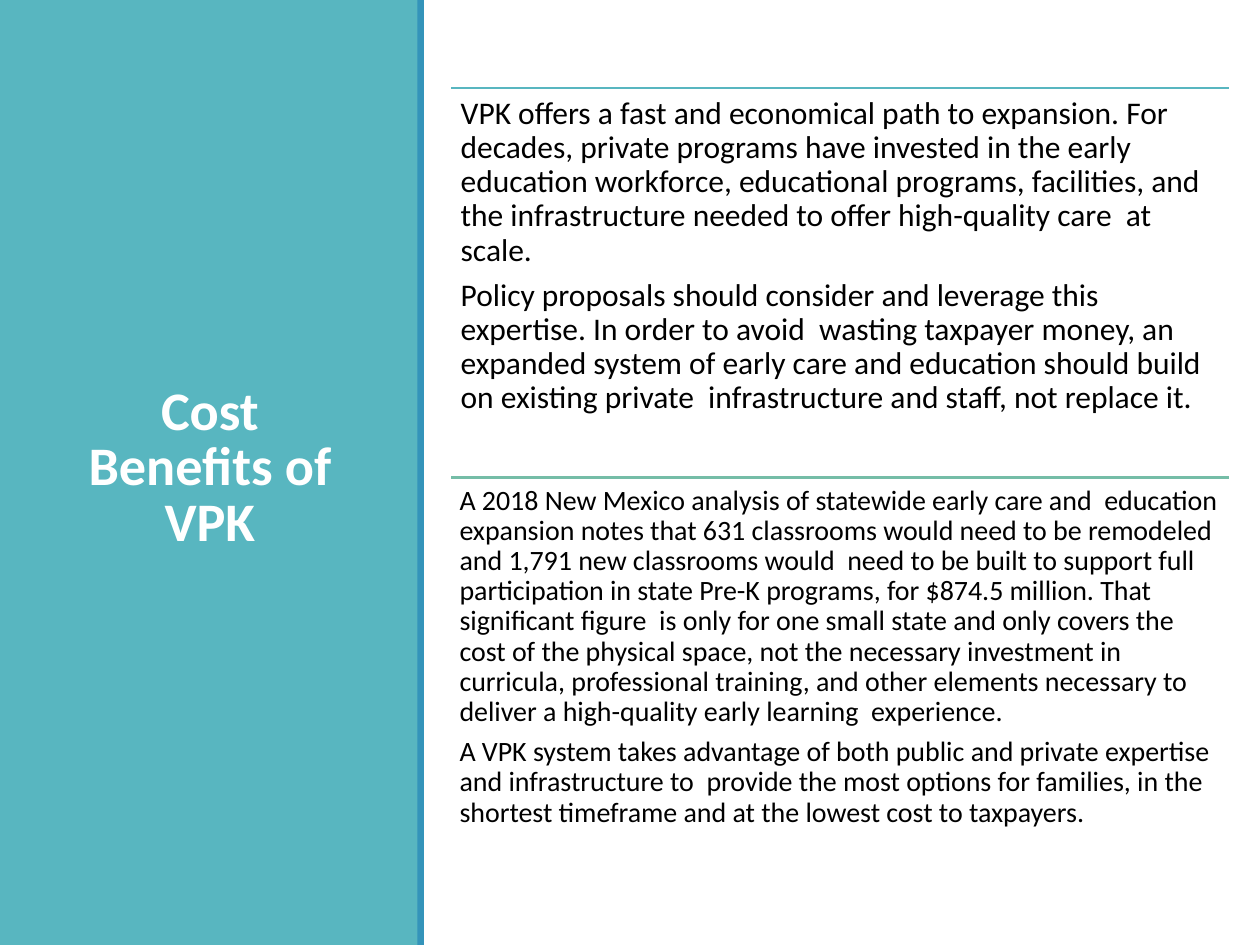
from lxml.etree import SubElement
from pptx import Presentation
from pptx.dml.color import RGBColor
from pptx.enum.shapes import MSO_CONNECTOR as Conn, MSO_SHAPE as Shape
from pptx.enum.text import MSO_ANCHOR as Anchor, MSO_AUTO_SIZE as Auto, PP_ALIGN as Align
from pptx.oxml.ns import qn
from pptx.util import Pt

TEAL = RGBColor(0x58, 0xB6, 0xC0)
BLUE = RGBColor(0x34, 0x94, 0xBA)
GREEN = RGBColor(0x75, 0xBD, 0xA7)
WHITE = RGBColor(0xFF, 0xFF, 0xFF)
BLACK = RGBColor(0, 0, 0)

# Text column, in points
LEFT, TOP, WIDTH, STEP = 257.8, 50.4, 444.2, 222.5

# Rule colour, text size and paragraphs of each block
BLOCKS = [
    (TEAL, 18, [
        "VPK offers a fast and economical path to expansion. For decades, "
        "private programs have invested in the early  education workforce, "
        "educational programs, facilities, and the infrastructure needed to "
        "offer high-quality care  at scale.",
        "Policy proposals should consider and leverage this expertise. In "
        "order to avoid  wasting taxpayer money, an expanded system of early "
        "care and education should build on existing private  infrastructure "
        "and staff, not replace it.",
    ]),
    (GREEN, 16, [
        "A 2018 New Mexico analysis of statewide early care and  education "
        "expansion notes that 631 classrooms would need to be remodeled and "
        "1,791 new classrooms would  need to be built to support full "
        "participation in state Pre-K programs, for $874.5 million. That "
        "significant figure  is only for one small state and only covers the "
        "cost of the physical space, not the necessary investment in  "
        "curricula, professional training, and other elements necessary to "
        "deliver a high-quality early learning  experience.",
        "A VPK system takes advantage of both public and private expertise "
        "and infrastructure to  provide the most options for families, in the "
        "shortest timeframe and at the lowest cost to taxpayers.",
    ]),
]


def place(item, x, y, w, h):
    item.left, item.top, item.width, item.height = Pt(x), Pt(y), Pt(w), Pt(h)


def write(frame, texts, *, size, color, bold=False, align=Align.LEFT,
          anchor=Anchor.TOP, lead=0.9, after=0, inset=None):
    """Fill a text frame with unbulleted paragraphs in one format."""
    frame.word_wrap = True
    frame.auto_size = Auto.NONE
    frame.vertical_anchor = anchor
    if inset is not None:
        frame.margin_left = frame.margin_right = Pt(inset)
        frame.margin_top = frame.margin_bottom = Pt(inset)
    for i, text in enumerate(texts):
        para = frame.add_paragraph() if i else frame.paragraphs[0]
        para.alignment = align
        para.line_spacing = lead
        para.space_before, para.space_after = Pt(0), Pt(after)
        props = para._p.get_or_add_pPr()
        props.set("marL", "0")
        props.set("indent", "0")
        SubElement(props, qn("a:buNone"))
        run = para.add_run()
        run.text = text
        font = run.font
        font.name, font.size, font.bold = "Calibri", Pt(size), bold
        font.color.rgb = color


def panel(slide, x, w, color, depth):
    """Add a full-height band at the given depth behind the text."""
    band = slide.shapes.add_shape(Shape.RECTANGLE, Pt(x), 0, Pt(w), Pt(540))
    band.shadow.inherit = False
    band.fill.solid()
    band.fill.fore_color.rgb = color
    band.line.fill.background()
    slide.shapes._spTree.insert(2 + depth, band._element)


def rule(slide, y, color):
    line = slide.shapes.add_connector(
        Conn.STRAIGHT, Pt(LEFT), Pt(y), Pt(LEFT + WIDTH), Pt(y))
    line.line.color.rgb = color
    line.line.width = Pt(1.25)
    SubElement(line._element.spPr, qn("a:effectLst"))


def main():
    deck = Presentation()
    deck.slide_width, deck.slide_height = Pt(720), Pt(540)
    slide = deck.slides.add_slide(deck.slide_layouts[3])
    title, *bodies = slide.placeholders

    # Side panel with its edge
    panel(slide, 0, 239, TEAL, 0)
    panel(slide, 238.5, 3.7, BLUE, 1)

    # Title
    place(title, 28.8, 41, 182.2, 454.3)
    write(title.text_frame, ["Cost Benefits of VPK"], size=31, color=WHITE,
          bold=True, align=Align.CENTER, anchor=Anchor.MIDDLE, lead=0.85)

    # Text blocks, each under a rule
    for i, (body, (color, size, texts)) in enumerate(zip(bodies, BLOCKS)):
        y = TOP + i * STEP
        rule(slide, y, color)
        place(body, LEFT, y, WIDTH, STEP)
        write(body.text_frame, texts, size=size, color=BLACK,
              after=0.35 * size, inset=size * 0.3)

    deck.save("out.pptx")


if __name__ == "__main__":
    main()
